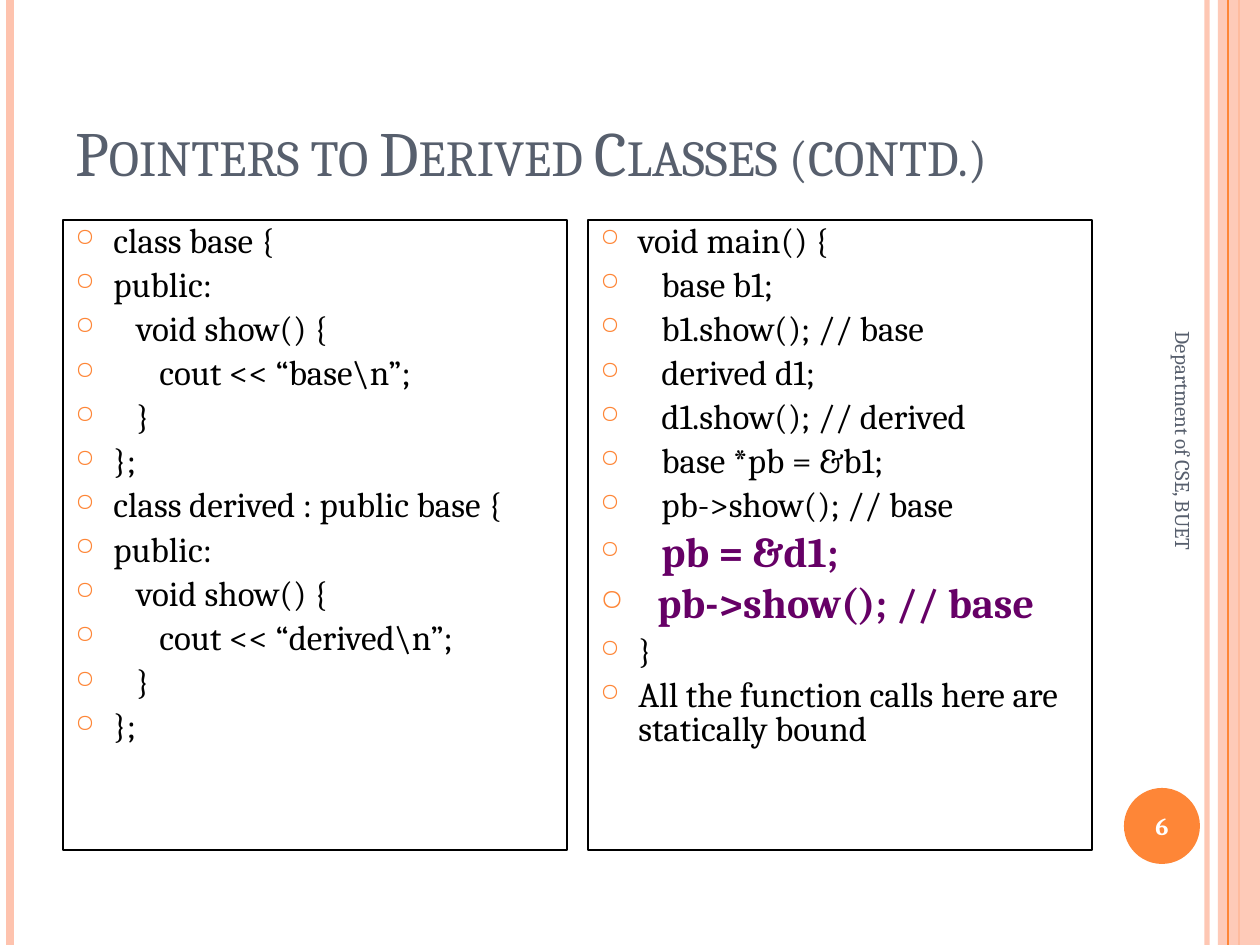
from lxml.etree import SubElement
from pptx import Presentation
from pptx.dml.color import RGBColor
from pptx.enum.shapes import MSO_CONNECTOR, MSO_SHAPE
from pptx.enum.text import MSO_ANCHOR, PP_ALIGN
from pptx.oxml.ns import qn
from pptx.util import Pt

PX = 914400 / 126
ORANGE, PEACH, SLATE = "FE8637", "FEC3AE", "575F6D"
PURPLE, BLACK, WHITE = "660066", "000000", "FFFFFF"


def paint(fill, color, opacity=100):
    fill.solid()
    fill.fore_color.rgb = RGBColor.from_string(color)
    if opacity < 100:
        color_element = fill._xPr.find(".//" + qn("a:srgbClr"))
        SubElement(color_element, qn("a:alpha"), val=str(opacity * 1000))


def write(paragraph, text, color, size, bold=False):
    run = paragraph.add_run()
    run.text = text
    values = {"name": "Cambria", "size": Pt(size), "bold": bold}
    for name, value in values.items():
        setattr(run.font, name, value)
    paint(run.font.fill, color)
    return run


presentation = Presentation()
presentation.slide_width = round(1260 * PX)
presentation.slide_height = round(945 * PX)
slide = presentation.slides.add_slide(presentation.slide_layouts[6])
paint(slide.background.fill, WHITE)
shapes = slide.shapes

stripes = [
    (1207, PEACH, 3, 93),
    (10, PEACH, 4.5, 100),
    (1239, ORANGE, 1.5, 100),
    (1228, ORANGE, 0.75, 100),
]
for x, color, width, opacity in stripes:
    if x == 1228:
        band = shapes.add_shape(
            MSO_SHAPE.RECTANGLE, *[round(v * PX) for v in (1218, 0, 42, 945)]
        )
        band.shadow.inherit = False
        paint(band.fill, PEACH, 87)
        band.line.fill.background()
    stripe = shapes.add_connector(
        MSO_CONNECTOR.STRAIGHT, round(x * PX), 0, round(x * PX), round(945 * PX)
    )
    stripe.line.width = Pt(width)
    paint(stripe.line.fill, color, opacity)
    SubElement(stripe._element.spPr, qn("a:effectLst"))

badge = shapes.add_shape(
    MSO_SHAPE.OVAL, *[round(v * PX) for v in (1124, 788, 76, 76)]
)
badge.shadow.inherit = False
paint(badge.fill, ORANGE)
badge.line.fill.background()

labels = [
    ("Pointers to Derived Classes (contd.)", (63, 38, 1029, 157),
     SLATE, 36, False, MSO_ANCHOR.BOTTOM, PP_ALIGN.LEFT, 0),
    ("Department of CSE, BUET", (963, 515, 441, 50),
     SLATE, 12, False, MSO_ANCHOR.MIDDLE, PP_ALIGN.LEFT, 90),
    ("6", (1120, 790, 84, 72),
     WHITE, 14, True, MSO_ANCHOR.MIDDLE, PP_ALIGN.CENTER, 0),
]
for text, box, color, size, bold, anchor, alignment, rotation in labels:
    label = shapes.add_textbox(*[round(v * PX) for v in box])
    label.rotation = rotation
    label.text_frame.word_wrap = True
    label.text_frame.vertical_anchor = anchor
    paragraph = label.text_frame.paragraphs[0]
    paragraph.alignment = alignment
    run = write(paragraph, text, color, size, bold)
    if size == 36:
        run.font._element.set("cap", "small")

plain = (BLACK, 20, False, 70)
columns = [
    (63, [
        (0, "class base {", plain),
        (0, "public:", plain),
        (23, "void show() {", plain),
        (46, "cout << “base\\n”;", plain),
        (23, "}", plain),
        (0, "};", plain),
        (0, "class derived : public base {", plain),
        (0, "public:", plain),
        (23, "void show() {", plain),
        (46, "cout << “derived\\n”;", plain),
        (23, "}", plain),
        (0, "};", plain),
    ]),
    (588, [
        (0, "void main() {", plain),
        (23, "base b1;", plain),
        (23, "b1.show(); // base", plain),
        (23, "derived d1;", plain),
        (23, "d1.show(); // derived", plain),
        (23, "base *pb = &b1;", plain),
        (23, "pb->show(); // base", plain),
        (23, "pb = &d1;", (PURPLE, 24, True, 58)),
        (19, "pb->show(); // base", (PURPLE, 24, True, 70)),
        (0, "}", plain),
        (0, "All the function calls here are statically bound", plain),
    ]),
]
for left, code_lines in columns:
    panel = shapes.add_textbox(*[round(v * PX) for v in (left, 220, 504, 630)])
    paint(panel.line.fill, BLACK)
    panel.line.width = Pt(0.75)
    frame = panel.text_frame
    frame.word_wrap = True
    for index, (indent, text, style) in enumerate(code_lines):
        color, size, bold, bullet_size = style
        paragraph = frame.add_paragraph() if index else frame.paragraphs[0]
        paragraph.line_spacing = 0.8
        paragraph.space_before = Pt(6)
        properties = paragraph._p.get_or_add_pPr()
        margin = round((38 + indent) * PX)
        properties.set("marL", str(margin))
        properties.set("indent", str(-margin))
        bullet_color = SubElement(properties, qn("a:buClr"))
        SubElement(bullet_color, qn("a:srgbClr"), val=ORANGE)
        SubElement(properties, qn("a:buSzPct"), val=str(bullet_size * 1000))
        SubElement(properties, qn("a:buChar"), char="○")
        write(paragraph, text, color, size, bold)

presentation.save("out.pptx")
